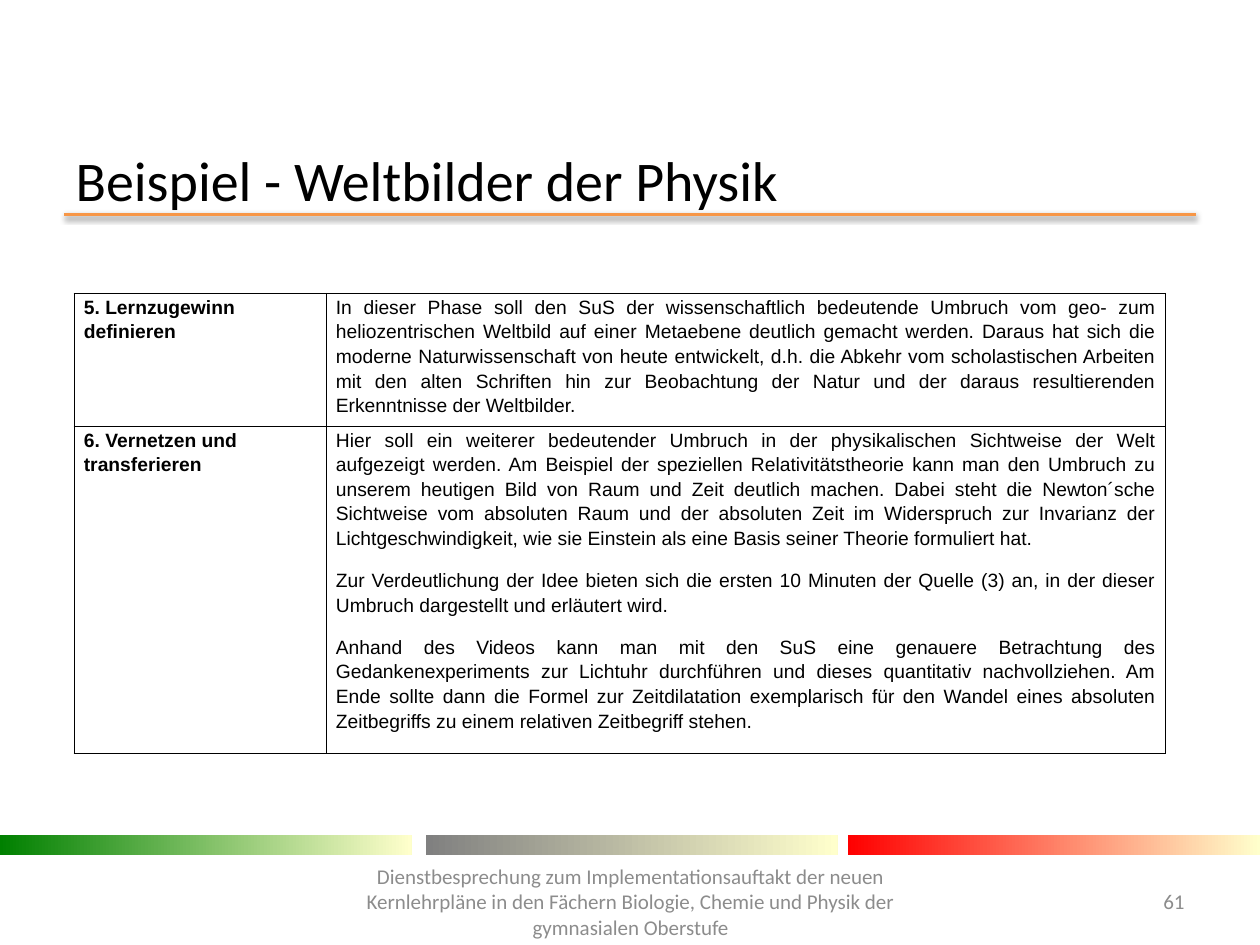
"""Build the slide "Beispiel - Weltbilder der Physik" with its two-row table."""
import pptx
import pptx.util
import pptx.dml.color
import pptx.enum.shapes
import pptx.enum.text
import pptx.oxml
import pptx.oxml.ns

Cm = pptx.util.Cm
Pt = pptx.util.Pt
RGBColor = pptx.dml.color.RGBColor
ALIGN = pptx.enum.text.PP_ALIGN
MIDDLE = pptx.enum.text.MSO_ANCHOR.MIDDLE

BLACK = RGBColor(0x00, 0x00, 0x00)
GREY = RGBColor(0x8C, 0x8C, 0x8C)
ORANGE = RGBColor(0xF7, 0x96, 0x46)
GREEN = RGBColor(0x00, 0x80, 0x00)
STONE = RGBColor(0x80, 0x80, 0x80)
RED = RGBColor(0xFF, 0x00, 0x00)
CREAM = RGBColor(0xFF, 0xFF, 0xCC)

NS = pptx.oxml.ns.nsdecls("a")
SHADOW = (
    f'<a:effectLst {NS}><a:outerShdw blurRad="39370" dist="20320" dir="5400000" rotWithShape="0">'
    '<a:srgbClr val="000000"><a:alpha val="38000"/></a:srgbClr></a:outerShdw></a:effectLst>'
)
BORDER = (
    '<a:{side} {ns} w="12700"><a:solidFill><a:srgbClr val="000000"/></a:solidFill></a:{side}>'
)

ROWS = [
    (
        ["5. Lernzugewinn definieren"],
        [
            "In dieser Phase soll den SuS der wissenschaftlich bedeutende Umbruch vom geo- zum "
            "heliozentrischen Weltbild auf einer Metaebene deutlich gemacht werden. Daraus hat sich "
            "die moderne Naturwissenschaft von heute entwickelt, d.h. die Abkehr vom scholastischen "
            "Arbeiten mit den alten Schriften hin zur Beobachtung der Natur und der daraus "
            "resultierenden Erkenntnisse der Weltbilder.",
        ],
    ),
    (
        ["6. Vernetzen und transferieren"],
        [
            "Hier soll ein weiterer bedeutender Umbruch in der physikalischen Sichtweise der Welt "
            "aufgezeigt werden. Am Beispiel der speziellen Relativitätstheorie kann man den Umbruch "
            "zu unserem heutigen Bild von Raum und Zeit deutlich machen. Dabei steht die Newton´sche "
            "Sichtweise vom absoluten Raum und der absoluten Zeit im Widerspruch zur Invarianz der "
            "Lichtgeschwindigkeit, wie sie Einstein als eine Basis seiner Theorie formuliert hat.",
            "Zur Verdeutlichung der Idee bieten sich die ersten 10 Minuten der Quelle (3) an, in der "
            "dieser Umbruch dargestellt und erläutert wird.",
            "Anhand des Videos kann man mit den SuS eine genauere Betrachtung des "
            "Gedankenexperiments zur Lichtuhr durchführen und dieses quantitativ nachvollziehen. Am "
            "Ende sollte dann die Formel zur Zeitdilatation exemplarisch für den Wandel eines "
            "absoluten Zeitbegriffs zu einem relativen Zeitbegriff stehen.",
        ],
    ),
]
NOTES = [
    ("61", 22.5, 17.65, 1.63, 1.02, ALIGN.RIGHT),
    (
        "Dienstbesprechung zum Implementationsauftakt der neuen Kernlehrpläne in den Fächern "
        "Biologie, Chemie und Physik der gymnasialen Oberstufe",
        6.81, 17.45, 11.81, 1.45, ALIGN.CENTER,
    ),
]


def write(para, text, face, size, color, align, bold=False):
    para.alignment = align
    run = para.add_run()
    run.text = text
    run.font.name = face
    run.font.size = Pt(size)
    run.font.bold = bold
    run.font.color.rgb = color


deck = pptx.Presentation()
deck.slide_width = Cm(25.4)
deck.slide_height = Cm(19.05)
slide = deck.slides.add_slide(deck.slide_layouts[5])
shapes = slide.shapes

rule = shapes.add_connector(
    pptx.enum.shapes.MSO_CONNECTOR.STRAIGHT, Cm(1.3), Cm(4.32), Cm(24.1), Cm(4.32)
)
rule.line.color.rgb = ORANGE
rule.line.width = Pt(2)
rule._element.spPr.append(pptx.oxml.parse_xml(SHADOW))

for left, color in [(0, GREEN), (8.59, STONE), (17.1, RED)]:
    bar = shapes.add_shape(
        pptx.enum.shapes.MSO_SHAPE.RECTANGLE, Cm(left), Cm(16.84), Cm(8.3), Cm(0.4)
    )
    bar.shadow.inherit = False
    bar.line.fill.background()
    bar.fill.gradient()
    bar.fill.gradient_angle = 0
    for stop, tone in zip(bar.fill.gradient_stops, (color, CREAM)):
        stop.color.rgb = tone

title = shapes.title
title.left, title.top, title.width, title.height = Cm(1.27), Cm(3.12), Cm(22.86), Cm(1)
frame = title.text_frame
frame.auto_size = pptx.enum.text.MSO_AUTO_SIZE.NONE
frame.vertical_anchor = MIDDLE
write(frame.paragraphs[0], "Beispiel - Weltbilder der Physik", "Calibri", 32, BLACK, ALIGN.LEFT)

for text, left, top, width, height, align in NOTES:
    frame = shapes.add_textbox(Cm(left), Cm(top), Cm(width), Cm(height)).text_frame
    frame.word_wrap = True
    frame.vertical_anchor = MIDDLE
    write(frame.paragraphs[0], text, "Calibri", 12, GREY, align)

table = shapes.add_table(2, 2, Cm(1.5), Cm(5.92), Cm(22), Cm(2)).table
table.first_row = False
table.horz_banding = False
for col, width in zip(table.columns, (5.08, 16.92)):
    col.width = Cm(width)

for row, texts in zip(table.rows, ROWS):
    row.height = Cm(1)
    for col, (cell, paras) in enumerate(zip(row.cells, texts)):
        cell.margin_left = cell.margin_right = Cm(0.19)
        cell.margin_top = cell.margin_bottom = 0
        cell.fill.background()
        props = cell._tc.get_or_add_tcPr()
        for spot, side in enumerate(("lnL", "lnR", "lnT", "lnB")):
            props.insert(spot, pptx.oxml.parse_xml(BORDER.format(side=side, ns=NS)))
        frame = cell.text_frame
        for count, text in enumerate(paras):
            para = frame.add_paragraph() if count else frame.paragraphs[0]
            para.line_spacing = 1.15
            para.space_after = Pt(10)
            align = ALIGN.JUSTIFY if col else ALIGN.LEFT
            write(para, text, "Arial", 11, BLACK, align, bold=col == 0)

deck.save("out.pptx")
